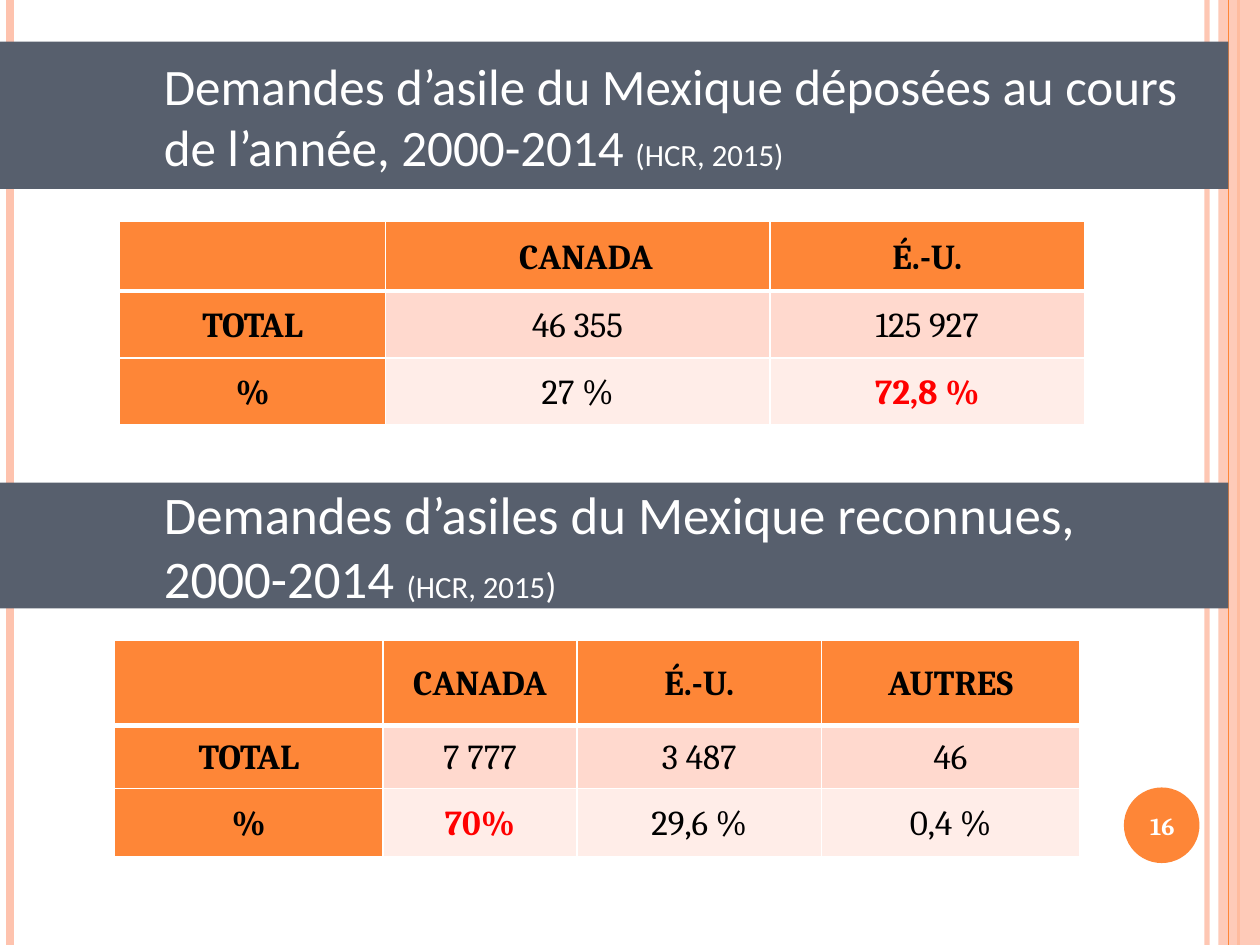
from lxml import etree
from pptx import Presentation
from pptx import util as u
from pptx.dml.color import RGBColor
from pptx.enum import shapes, text
from pptx.oxml.ns import qn

# Grid of the slide: 100 columns by 75 rows
WIDE, HIGH = u.Inches(10), u.Inches(7.5)
COL, ROW = WIDE / 100, HIGH / 75
ORANGE, PEACH, SLATE, WHITE = "FE8637", "FEC3AE", "575F6D", "FFFFFF"
BLACK, RED = "000000", "FF0000"
TINTS = ["FFD9CE", "FFEDE8"]


def color(code):
    return RGBColor.from_string(code)


def place(x, y, w, h):
    return [int(v) for v in (x * COL, y * ROW, w * COL, h * ROW)]


def fade(part, share):
    """Set the opacity of every solid colour in a part, in percent."""
    for node in part._element.spPr.iter(qn("a:srgbClr")):
        etree.SubElement(node, qn("a:alpha"), val=str(share * 1000))


def style(font, name, size, code, bold=False):
    font.name, font.size, font.bold = name, u.Pt(size), bold
    font.color.rgb = color(code)


def pad(part, sides):
    """Set left, top, right and bottom margins in grid units."""
    left, top, right, low = sides
    part.margin_left, part.margin_right = int(left * COL), int(right * COL)
    part.margin_top, part.margin_bottom = int(top * ROW), int(low * ROW)


def solid(slide, kind, box, code):
    part = slide.shapes.add_shape(kind, *place(*box))
    part.shadow.inherit = False
    part.fill.solid()
    part.fill.fore_color.rgb = color(code)
    part.line.fill.background()
    return part


def stripe(slide, x, code, width):
    left, top, _, high = place(x, 0, 0, 75)
    line = slide.shapes.add_connector(
        shapes.MSO_CONNECTOR.STRAIGHT, left, top, left, top + high)
    line.line.color.rgb = color(code)
    line.line.width = u.Pt(width)
    etree.SubElement(line._element.spPr, qn("a:effectLst"))
    return line


def frame(slide):
    """Vertical stripes and the disc behind the slide number."""
    fade(stripe(slide, 95.8, PEACH, 3), 93)
    stripe(slide, 0.8, PEACH, 4.5)
    stripe(slide, 98.3, ORANGE, 1.5)
    fade(solid(slide, shapes.MSO_SHAPE.RECTANGLE,
               (96.7, 0, 3.3, 75), PEACH), 87)
    stripe(slide, 97.5, ORANGE, 0.75)
    solid(slide, shapes.MSO_SHAPE.OVAL, (89.2, 62.5, 6, 6), ORANGE)


def band(slide, box, runs):
    """Title band; runs are pairs of words and size."""
    part = solid(slide, shapes.MSO_SHAPE.RECTANGLE, box, SLATE)
    body = part.text_frame
    body.word_wrap = True
    body.vertical_anchor = text.MSO_ANCHOR.MIDDLE
    pad(body, (13, 0.5, 3, 0.5))
    para = body.paragraphs[0]
    para.alignment = text.PP_ALIGN.LEFT
    for words, size in runs:
        run = para.add_run()
        run.text = words
        style(run.font, "Calibri", size, WHITE)


def edge(cell, row):
    """White borders, thick between the header and the body."""
    thick = {(0, "B"), (1, "T")}
    props = cell._tc.get_or_add_tcPr()
    for side in "LRTB":
        width = u.Pt(3 if (row, side) in thick else 1)
        line = etree.SubElement(props, qn("a:ln" + side), w=str(width))
        paint = etree.SubElement(line, qn("a:solidFill"))
        etree.SubElement(paint, qn("a:srgbClr"), val=WHITE)


def grid(slide, spot, cols, rows, data, hot, sides, after):
    """Table with header row and column; hot is the cell in red."""
    box = place(*spot, sum(cols), sum(rows))
    table = slide.shapes.add_table(len(rows), len(cols), *box).table
    for n, wide in enumerate(cols):
        table.columns[n].width = int(wide * COL)
    for r, high in enumerate(rows):
        table.rows[r].height = int(high * ROW)
        for c, words in enumerate(data[r]):
            cell = table.cell(r, c)
            head = r == 0 or c == 0
            edge(cell, r)
            cell.fill.solid()
            cell.fill.fore_color.rgb = color(ORANGE if head else TINTS[r - 1])
            cell.vertical_anchor = text.MSO_ANCHOR.MIDDLE
            pad(cell, sides)
            para = cell.text_frame.paragraphs[0]
            para.text = words
            para.alignment = text.PP_ALIGN.CENTER
            para.line_spacing, para.space_after = 1.07, u.Pt(after)
            red = (r, c) == hot
            style(para.font, "Cambria", 20, RED if red else BLACK, head or red)
    return table


def number(slide, box, words):
    body = slide.shapes.add_textbox(*place(*box)).text_frame
    body.word_wrap = True
    body.vertical_anchor = text.MSO_ANCHOR.MIDDLE
    para = body.paragraphs[0]
    para.text = words
    para.alignment = text.PP_ALIGN.CENTER
    style(para.font, "Cambria", 14, WHITE, True)


def main():
    deck = Presentation()
    deck.slide_width, deck.slide_height = WIDE, HIGH
    slide = deck.slides.add_slide(deck.slide_layouts[6])
    frame(slide)

    # Claims filed
    band(slide, (0, 3.3, 97.5, 11.7), [
        ("Demandes d’asile du Mexique déposées au cours "
         "de l’année, 2000-2014 ", 29.2),
        ("(HCR, 2015)", 17.6)])
    filed = grid(slide, (9.5, 17.6), [21.1, 30.5, 25], [5.5, 5.3, 5.3], [
        ["", "CANADA", "É.-U."],
        ["TOTAL", "46 355", "125 927"],
        ["%", "27 %", "72,8 %"]], (2, 2), (0.1, 0.1, 0.1, 0), 8)
    first = filed.cell(0, 1).text_frame.paragraphs[0]
    first._p.get_or_add_pPr().set("indent", str(int(1.3 * COL)))

    # Claims recognised
    band(slide, (0, 38.3, 97.5, 10), [
        ("Demandes d’asiles du Mexique reconnues, 2000-2014 ", 30.2),
        ("(HCR, 2015", 17.6), (")", 20.5)])
    grid(slide, (9.1, 50.8), [21.3, 15.4, 19.4, 20.5], [6.8, 5, 5.4], [
        ["", "CANADA", "É.-U.", "AUTRES"],
        ["TOTAL", "7 777", "3 487", "46"],
        ["%", "70%", "29,6 %", "0,4 %"]], (2, 1), (0.7, 0, 0.7, 0), 0)

    number(slide, (88.9, 62.7, 6.7, 5.7), "16")
    deck.save("out.pptx")


if __name__ == "__main__":
    main()
